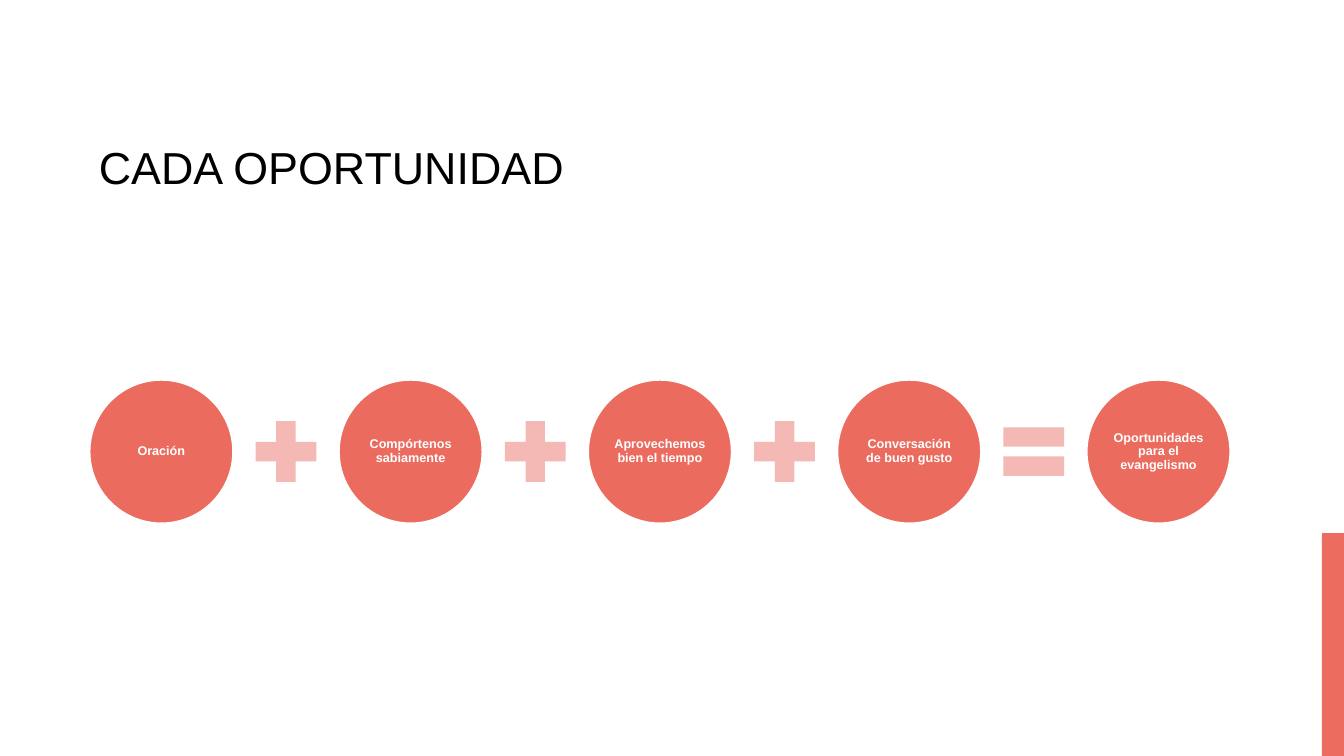
"""Build the slide CADA OPORTUNIDAD: four steps that add up to a result."""
from pptx import Presentation
from pptx.dml.color import RGBColor
from pptx.enum.shapes import MSO_SHAPE
from pptx.enum.text import MSO_ANCHOR, MSO_AUTO_SIZE, PP_ALIGN
from pptx.util import Inches, Pt

TITLE = "CADA OPORTUNIDAD"
STEPS = [
    "Oración",
    "Compórtenos sabiamente",
    "Aprovechemos bien el tiempo",
    "Conversación de buen gusto",
    "Oportunidades para el evangelismo",
]
HEX = {"bar": "EC6D60", "disc": "EB6C5F", "sign": "F4B9B5", "white": "FFFFFF", "black": "000000"}
WIDE, HIGH = 13.33, 7.5
LEFT, RIGHT, MID = 0.89, 12.2, 4.48
DISC, SIGN = 1.42, 0.82
PITCH = (RIGHT - LEFT - DISC) / (len(STEPS) - 1)
PLUS = (MSO_SHAPE.MATH_PLUS, [0.235])
EQUAL = (MSO_SHAPE.MATH_EQUAL, [0.235, 0.118])


def color(name):
    return RGBColor.from_string(HEX[name])


def draw(slide, kind, box, fill):
    part = slide.shapes.add_shape(kind, *map(Inches, box))
    part.shadow.inherit = False
    part.fill.solid()
    part.fill.fore_color.rgb = color(fill)
    part.line.fill.background()
    return part


def write(shape, text, look, pad, anchor, align, space):
    frame = shape.text_frame
    frame.text = text
    form = {"word_wrap": True, "auto_size": MSO_AUTO_SIZE.NONE, "vertical_anchor": anchor,
            "margin_left": Inches(pad[0]), "margin_right": Inches(pad[0]),
            "margin_top": Inches(pad[1]), "margin_bottom": Inches(pad[1])}
    for key, value in form.items():
        setattr(frame, key, value)
    para = frame.paragraphs[0]
    para.alignment, para.line_spacing = align, space
    font = para.runs[0].font
    for key, value in look.items():
        setattr(font, key, value)
    return font


def add_title(slide):
    title = slide.shapes.title
    box = {"left": 0.88, "top": 0.4, "width": 11.33, "height": 1.57}
    for key, value in box.items():
        setattr(title, key, Inches(value))
    look = {"name": "Arial", "size": Pt(32), "bold": False}
    font = write(title, TITLE, look, (0.1, 0.05), MSO_ANCHOR.BOTTOM, PP_ALIGN.LEFT, 1.2)
    font.color.rgb = color("black")


def add_step(slide, text, left):
    disc = draw(slide, MSO_SHAPE.OVAL, (left, MID - DISC / 2, DISC, DISC), "disc")
    disc.line.color.rgb = color("white")
    disc.line.width = Pt(1)
    look = {"name": "Arial", "size": Pt(9), "bold": True}
    font = write(disc, text, look, (0.01, 0.01), MSO_ANCHOR.MIDDLE, PP_ALIGN.CENTER, 0.9)
    font.color.rgb = color("white")


def add_sign(slide, kind, ratios, left):
    sign = draw(slide, kind, (left, MID - SIGN / 2, SIGN, SIGN), "sign")
    for spot, ratio in enumerate(ratios):
        sign.adjustments[spot] = ratio


def main():
    deck = Presentation()
    deck.slide_width, deck.slide_height = Inches(WIDE), Inches(HIGH)
    slide = deck.slides.add_slide(deck.slide_layouts[5])
    draw(slide, MSO_SHAPE.RECTANGLE, (WIDE - 0.22, 5.29, 0.22, HIGH - 5.29), "bar")
    add_title(slide)
    signs = [PLUS] * (len(STEPS) - 2) + [EQUAL]
    for col, text in enumerate(STEPS):
        left = LEFT + col * PITCH
        add_step(slide, text, left)
        if col < len(signs):
            add_sign(slide, *signs[col], left + (DISC + PITCH - SIGN) / 2)
    deck.save("out.pptx")


if __name__ == "__main__":
    main()
